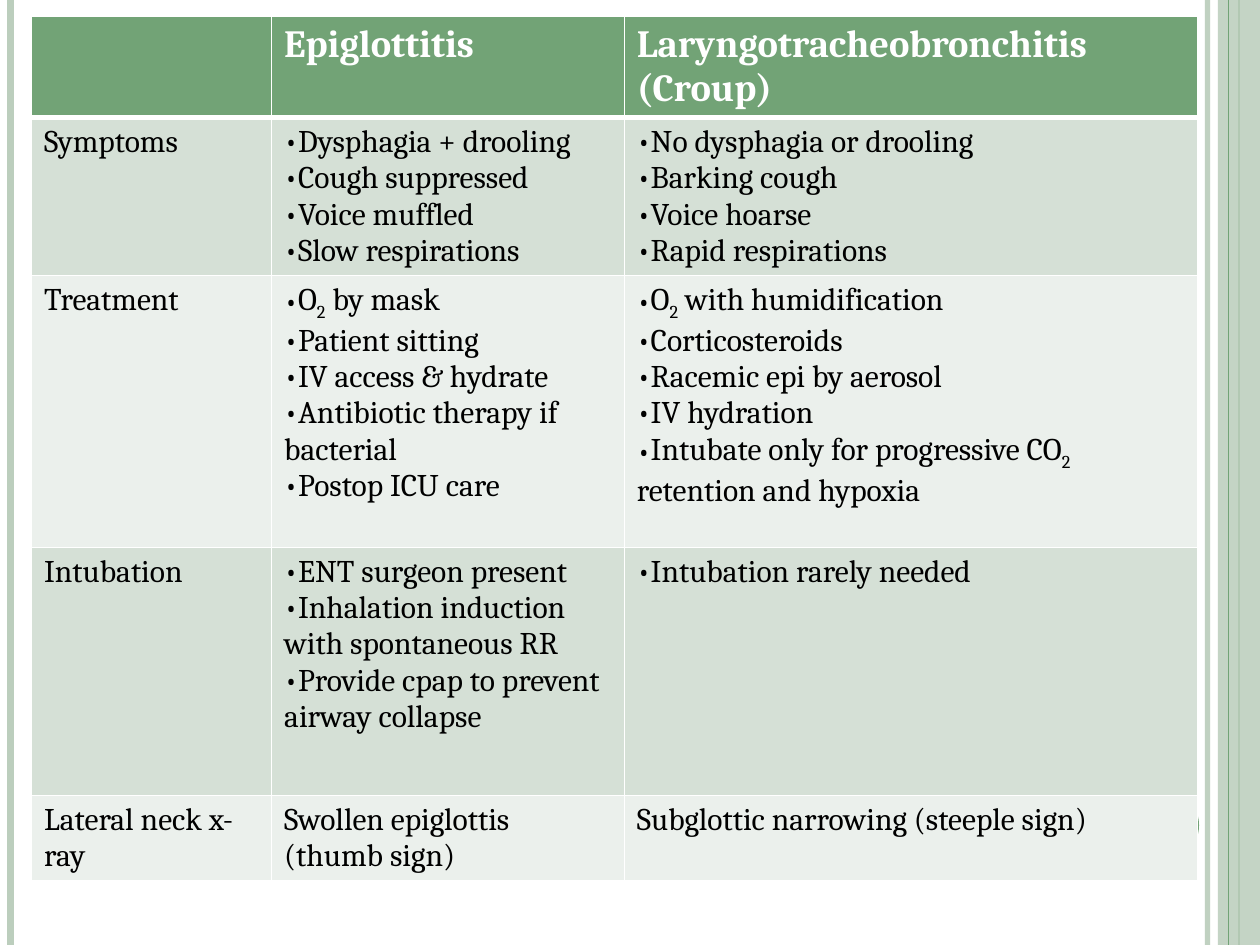
import pptx
import pptx.dml.color
import pptx.enum.shapes
import pptx.oxml
import pptx.oxml.ns
import pptx.util
from lxml import etree

Pt = pptx.util.Pt
qn = pptx.oxml.ns.qn

COLORS = {
    "green": "72A376",
    "sage": "BCCEBD",
    "band_dark": "D5E0D6",
    "band_light": "EBF0EC",
    "white": "FFFFFF",
    "black": "000000",
}
FONT = "Cambria"
SLIDE_WIDTH, SLIDE_HEIGHT = 720, 540

COLUMN_WIDTHS = [137.25, 201.5, 327.5]
ROW_HEIGHTS = [57.8, 90.2, 155.3, 141.8, 48.5]
# Cells with a list are bulleted; ₂ marks a subscript 2.
HEADER = ["", "Epiglottitis", "Laryngotracheobronchitis\n(Croup)"]
ROWS = [
    ["Symptoms",
     ["Dysphagia + drooling", "Cough suppressed", "Voice muffled", "Slow respirations"],
     ["No dysphagia or drooling", "Barking cough", "Voice hoarse", "Rapid respirations"]],
    ["Treatment",
     ["O₂ by mask", "Patient sitting", "IV access & hydrate",
      "Antibiotic therapy if bacterial", "Postop ICU care"],
     ["O₂ with humidification", "Corticosteroids", "Racemic epi by aerosol", "IV hydration",
      "Intubate only for progressive CO₂ retention and hypoxia"]],
    ["Intubation",
     ["ENT surgeon present", "Inhalation induction with spontaneous RR",
      "Provide cpap to prevent airway collapse"],
     ["Intubation rarely needed"]],
    ["Lateral neck x-ray", "Swollen epiglottis (thumb sign)",
     "Subglottic narrowing (steeple sign)"],
]


def rgb(name):
    return pptx.dml.color.RGBColor.from_string(COLORS[name])


def set_opacity(shape, percent):
    for color in shape._element.spPr.iter(qn("a:srgbClr")):
        etree.SubElement(color, qn("a:alpha")).set("val", str(percent * 1000))


def add_vertical_line(slide, x, color, width):
    line = slide.shapes.add_connector(
        pptx.enum.shapes.MSO_CONNECTOR.STRAIGHT, Pt(x), Pt(0), Pt(x), Pt(SLIDE_HEIGHT))
    line.line.color.rgb = rgb(color)
    line.line.width = Pt(width)
    etree.SubElement(line._element.spPr, qn("a:effectLst"))
    return line


def add_filled_shape(slide, kind, color, left, top, width, height):
    shape = slide.shapes.add_shape(kind, Pt(left), Pt(top), Pt(width), Pt(height))
    shape.shadow.inherit = False
    shape.fill.solid()
    shape.fill.fore_color.rgb = rgb(color)
    shape.line.fill.background()
    return shape


def add_side_decoration(slide):
    shapes = pptx.enum.shapes.MSO_SHAPE
    set_opacity(add_vertical_line(slide, 690, "sage", 3), 93)
    add_vertical_line(slide, 6, "sage", 4.5)
    add_vertical_line(slide, 708, "green", 1.5)
    band = add_filled_shape(slide, shapes.RECTANGLE, "sage", 696, 0, 24, SLIDE_HEIGHT)
    set_opacity(band, 87)
    add_vertical_line(slide, 702, "green", 0.75)
    add_filled_shape(slide, shapes.OVAL, "green", 642, 450, 43.2, 43.2)


def set_borders(cell, top, bottom):
    properties = cell._tc.get_or_add_tcPr()
    for side, width in (("L", 1), ("R", 1), ("T", top), ("B", bottom)):
        border = etree.SubElement(properties, qn(f"a:ln{side}"), w=str(Pt(width)))
        fill = etree.SubElement(border, qn("a:solidFill"))
        etree.SubElement(fill, qn("a:srgbClr"), val=COLORS["white"])


def add_bullet(paragraph):
    properties = paragraph._p.get_or_add_pPr()
    properties.set("marL", "0")
    properties.set("indent", "0")
    etree.SubElement(properties, qn("a:buFont"), typeface=FONT)
    etree.SubElement(properties, qn("a:buChar"), char="•")


def write_paragraph(paragraph, text, size, color, bold):
    paragraph.font.name = FONT
    paragraph.font.size = Pt(size)
    paragraph.font.bold = bold
    paragraph.font.color.rgb = rgb(color)
    for index, part in enumerate(text.split("₂")):
        if index:
            subscript = paragraph.add_run()
            subscript.text = "2"
            subscript._r.get_or_add_rPr().set("baseline", "-25000")
        if part:
            paragraph.add_run().text = part


def fill_cell(cell, content, fill, size=18, color="black", bold=False):
    cell.fill.solid()
    cell.fill.fore_color.rgb = rgb(fill)
    bulleted = isinstance(content, list)
    frame = cell.text_frame
    for index, text in enumerate(content if bulleted else content.split("\n")):
        paragraph = frame.add_paragraph() if index else frame.paragraphs[0]
        if bulleted:
            add_bullet(paragraph)
        write_paragraph(paragraph, text, size, color, bold)


def add_comparison_table(slide):
    table = slide.shapes.add_table(
        len(ROW_HEIGHTS), len(COLUMN_WIDTHS), Pt(18), Pt(9.3),
        Pt(sum(COLUMN_WIDTHS)), Pt(sum(ROW_HEIGHTS))).table
    for column, width in zip(table.columns, COLUMN_WIDTHS):
        column.width = Pt(width)
    for row, height in zip(table.rows, ROW_HEIGHTS):
        row.height = Pt(height)
    for row_index, contents in enumerate([HEADER] + ROWS):
        for column_index, content in enumerate(contents):
            cell = table.cell(row_index, column_index)
            set_borders(cell, top=3 if row_index == 1 else 1, bottom=3 if row_index == 0 else 1)
            if row_index == 0:
                fill_cell(cell, content, "green", size=22, color="white", bold=True)
            else:
                fill_cell(cell, content, "band_dark" if row_index % 2 else "band_light")


def main():
    presentation = pptx.Presentation()
    presentation.slide_width = Pt(SLIDE_WIDTH)
    presentation.slide_height = Pt(SLIDE_HEIGHT)
    slide = presentation.slides.add_slide(presentation.slide_layouts[6])
    add_side_decoration(slide)
    add_comparison_table(slide)
    presentation.save("out.pptx")


if __name__ == "__main__":
    main()
